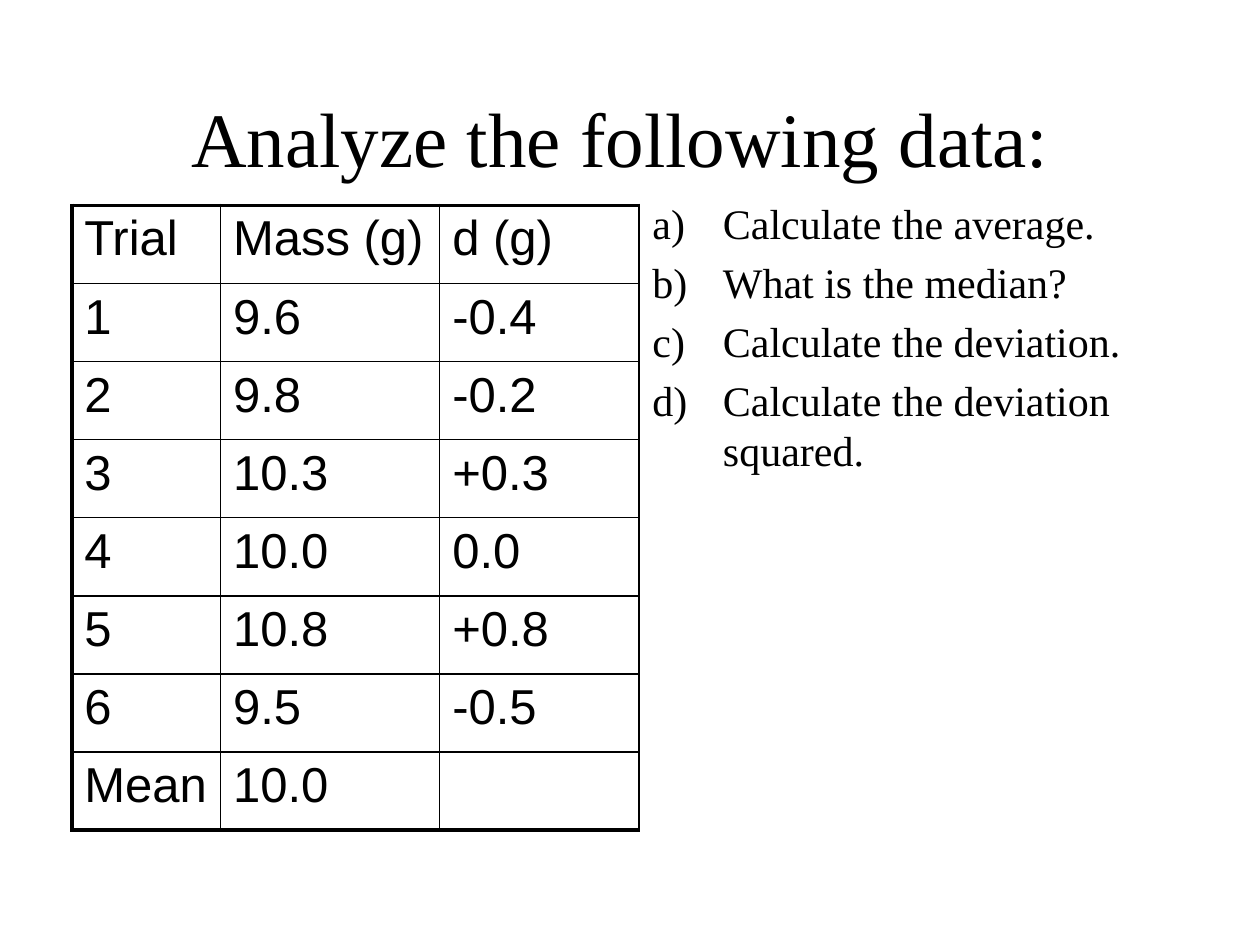
from pptx import Presentation
from pptx.dml.color import RGBColor
from pptx.enum import text
from pptx.oxml.ns import qn
from pptx.util import Inches, Pt
from lxml import etree

TITLE = "Analyze the following data: "
MEASUREMENTS = [
    ("Trial", "Mass (g)", "d (g)"),
    ("1", "9.6", "-0.4"),
    ("2", "9.8", "-0.2"),
    ("3", "10.3", "+0.3"),
    ("4", "10.0", "0.0"),
    ("5", "10.8", "+0.8"),
    ("6", "9.5", "-0.5"),
    ("Mean", "10.0", ""),
]
QUESTIONS = [
    "Calculate the average.",
    "What is the median?",
    "Calculate the deviation.",
    "Calculate the deviation squared.",
]
COLUMN_WIDTHS = (1.18, 1.74, 1.58)
ROW_HEIGHT = 0.62
THEME = {
    "ink": "000000",
    "serif": "Times New Roman",
    "sans": "Arial",
    "title": 44,
    "table": 28,
    "list": 24,
    "outer": 2.25,
    "inner": 1,
}


def add_span(para, words, font, size):
    span = para.add_run()
    span.text = words
    span.font.name = THEME[font]
    span.font.size = Pt(THEME[size])
    span.font.color.rgb = RGBColor.from_string(THEME["ink"])


def space_before(para):
    spacing = etree.SubElement(para._p.get_or_add_pPr(), qn("a:spcBef"))
    etree.SubElement(spacing, qn("a:spcPct"), val="20000")


def number_para(para):
    properties = para._p.get_or_add_pPr()
    properties.set("marL", str(Inches(0.56)))
    properties.set("indent", str(-Inches(0.56)))
    etree.SubElement(properties, qn("a:buAutoNum"), type="alphaLcParenR")


def add_box(page, left, top, width, height):
    box = page.shapes.add_textbox(Inches(left), Inches(top), Inches(width), Inches(height))
    box.text_frame.word_wrap = True
    return box.text_frame


def set_borders(cell, widths):
    properties = cell._tc.get_or_add_tcPr()
    for index, (side, width) in enumerate(widths.items()):
        line = etree.Element(qn(f"a:ln{side}"), w=str(Pt(width)))
        fill = etree.SubElement(line, qn("a:solidFill"))
        etree.SubElement(fill, qn("a:srgbClr"), val=THEME["ink"])
        properties.insert(index, line)


def add_title(page):
    frame = add_box(page, 0.75, 0.67, 8.5, 0.83)
    frame.vertical_anchor = text.MSO_ANCHOR.MIDDLE
    para = frame.paragraphs[0]
    para.alignment = text.PP_ALIGN.CENTER
    add_span(para, TITLE, "serif", "title")


def add_measurements(page):
    row_count = len(MEASUREMENTS)
    table = page.shapes.add_table(
        row_count, len(COLUMN_WIDTHS), Inches(0.57), Inches(1.63),
        Inches(sum(COLUMN_WIDTHS)), Inches(ROW_HEIGHT * row_count)).table
    table.first_row = table.horz_banding = False
    for column, width in zip(table.columns, COLUMN_WIDTHS):
        column.width = Inches(width)
    outer, inner = THEME["outer"], THEME["inner"]
    for r, values in enumerate(MEASUREMENTS):
        table.rows[r].height = Inches(ROW_HEIGHT)
        for c, value in enumerate(values):
            cell = table.cell(r, c)
            cell.fill.background()
            set_borders(cell, {
                "L": outer if c == 0 else inner,
                "R": inner,
                "T": outer if r == 0 else inner,
                "B": outer if r == row_count - 1 else inner,
            })
            if value:
                para = cell.text_frame.paragraphs[0]
                space_before(para)
                add_span(para, value, "sans", "table")


def add_questions(page):
    frame = add_box(page, 5.08, 1.52, 4.83, 5.06)
    for index, question in enumerate(QUESTIONS):
        para = frame.add_paragraph() if index else frame.paragraphs[0]
        space_before(para)
        number_para(para)
        add_span(para, question, "serif", "list")


def main():
    deck = Presentation()
    deck.slide_width, deck.slide_height = Inches(10), Inches(7.5)
    page = deck.slides.add_slide(deck.slide_layouts[6])
    add_title(page)
    add_measurements(page)
    add_questions(page)
    deck.save("out.pptx")


if __name__ == "__main__":
    main()
